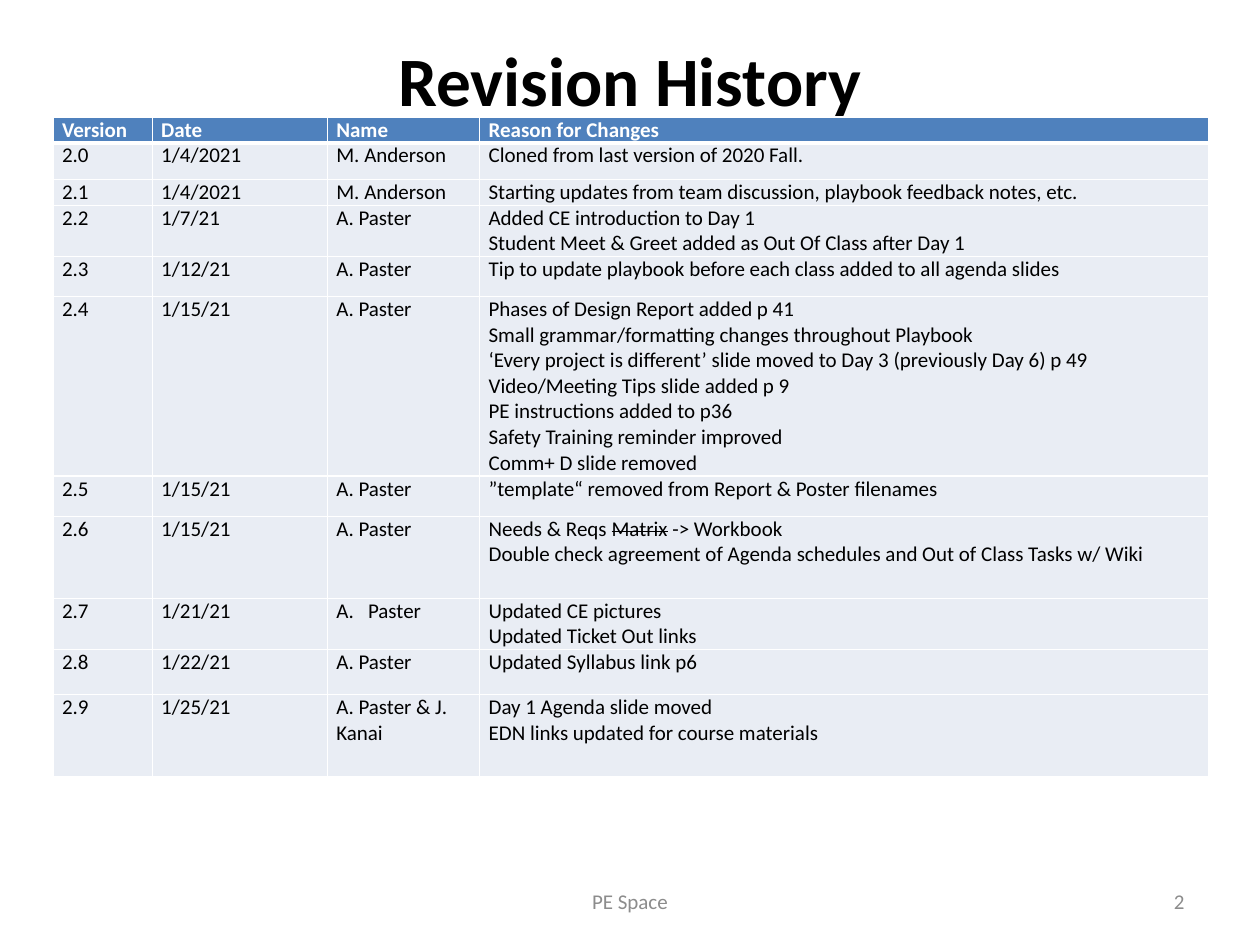
from lxml import etree
from pptx import Presentation
from pptx.dml.color import RGBColor
from pptx.enum.text import MSO_ANCHOR, PP_ALIGN
from pptx.oxml.ns import qn
from pptx.util import Cm, Pt

CENTER, LEFT, RIGHT = PP_ALIGN.CENTER, PP_ALIGN.LEFT, PP_ALIGN.RIGHT
TOP, MIDDLE = MSO_ANCHOR.TOP, MSO_ANCHOR.MIDDLE
FONT = "Calibri"
COLORS = {"text": "000000", "white": "FFFFFF", "header": "4F81BD", "body": "E9EDF4", "footer": "8C8C8C"}
COLUMN_WIDTHS = [2.0, 3.53, 3.07, 14.7]
HEADERS = ["Version", "Date", "Name", "Reason for Changes"]
HEADER_HEIGHT = 0.52
STRUCK = "Matrix"
LETTERED = "2.7"
REVISIONS = [
    (0.74, "2.0", "1/4/2021", "M. Anderson", "Cloned from last version of 2020 Fall."),
    (0.52, "2.1", "1/4/2021", "M. Anderson",
     "Starting updates from team discussion, playbook feedback notes, etc."),
    (1.03, "2.2", "1/7/21", "A. Paster",
     "Added CE introduction to Day 1\nStudent Meet & Greet added as Out Of Class after Day 1"),
    (0.81, "2.3", "1/12/21", "A. Paster",
     "Tip to update playbook before each class added to all agenda slides"),
    (3.62, "2.4", "1/15/21", "A. Paster",
     "Phases of Design Report added p 41\n"
     "Small grammar/formatting changes throughout Playbook\n"
     "‘Every project is different’ slide moved to Day 3 (previously Day 6) p 49\n"
     "Video/Meeting Tips slide added p 9\n"
     "PE instructions added to p36\n"
     "Safety Training reminder improved\n"
     "Comm+ D slide removed"),
    (0.81, "2.5", "1/15/21", "A. Paster", "”template“ removed from Report & Poster filenames"),
    (1.65, "2.6", "1/15/21", "A. Paster",
     "Needs & Reqs Matrix -> Workbook\n"
     "Double check agreement of Agenda schedules and Out of Class Tasks w/ Wiki"),
    (1.03, LETTERED, "1/21/21", "Paster", "Updated CE pictures\nUpdated Ticket Out links"),
    (0.91, "2.8", "1/22/21", "A. Paster", "Updated Syllabus link p6"),
    (1.65, "2.9", "1/25/21", "A. Paster & J. Kanai",
     "Day 1 Agenda slide moved\nEDN links updated for course materials"),
]


def add_span(para, text, size=12, color="text", bold=False, struck=False):
    """Add a formatted run to a paragraph."""
    span = para.add_run()
    span.text = text
    span.font.name = FONT
    span.font.size = Pt(size)
    span.font.bold = bold
    span.font.color.rgb = RGBColor.from_string(COLORS[color])
    if struck:
        span.font._element.set("strike", "sngStrike")


def add_text(page, text, left, top, width, height, align=CENTER, anchor=MIDDLE, inset=0.25, **style):
    """Add a one-paragraph text box."""
    box = page.shapes.add_textbox(Cm(left), Cm(top), Cm(width), Cm(height))
    frame = box.text_frame
    frame.word_wrap = True
    frame.vertical_anchor = anchor
    frame.margin_left = frame.margin_right = Cm(0.25)
    frame.margin_top = frame.margin_bottom = Cm(inset)
    para = frame.paragraphs[0]
    para.alignment = align
    add_span(para, text, **style)


def set_border(cell, side, width):
    """Draw one white edge of a table cell."""
    line = etree.SubElement(cell._tc.get_or_add_tcPr(), qn(f"a:ln{side}"), w=str(Pt(width)))
    fill = etree.SubElement(line, qn("a:solidFill"))
    etree.SubElement(fill, qn("a:srgbClr"), val=COLORS["white"])


def set_lettering(para):
    """Number a paragraph with capital letters and a hanging indent."""
    properties = para._p.get_or_add_pPr()
    properties.set("marL", str(Cm(0.64)))
    properties.set("indent", str(Cm(-0.64)))
    etree.SubElement(properties, qn("a:buFont"), typeface="+mj-lt")
    etree.SubElement(properties, qn("a:buAutoNum"), type="alphaUcPeriod")


def fill_cell(cell, text, fill="body", top=1, bottom=1, lettered=False, **style):
    """Write and format one table cell."""
    cell.margin_left = cell.margin_right = Cm(0.18)
    cell.margin_top = cell.margin_bottom = 0
    for side, width in {"L": 1, "R": 1, "T": top, "B": bottom}.items():
        set_border(cell, side, width)
    cell.fill.solid()
    cell.fill.fore_color.rgb = RGBColor.from_string(COLORS[fill])
    frame = cell.text_frame
    for index, line in enumerate(text.split("\n")):
        para = frame.add_paragraph() if index else frame.paragraphs[0]
        para.alignment = LEFT
        if lettered:
            set_lettering(para)
        before, match, after = line.partition(STRUCK)
        for part in (before, match, after):
            if part:
                add_span(para, part, struck=part == STRUCK, **style)


def add_revision_table(page):
    """Add the table of revisions under its header row."""
    heights = [HEADER_HEIGHT] + [revision[0] for revision in REVISIONS]
    table = page.shapes.add_table(len(heights), len(HEADERS), Cm(1.07), Cm(2.36),
                                  Cm(sum(COLUMN_WIDTHS)), Cm(sum(heights))).table
    for column, width in zip(table.columns, COLUMN_WIDTHS):
        column.width = Cm(width)
    for row, height in zip(table.rows, heights):
        row.height = Cm(height)
    for column, text in enumerate(HEADERS):
        fill_cell(table.cell(0, column), text, fill="header", bottom=3, color="white", bold=True)
    for row, (_, *texts) in enumerate(REVISIONS, start=1):
        for column, text in enumerate(texts):
            lettered = texts[0] == LETTERED and HEADERS[column] == "Name"
            fill_cell(table.cell(row, column), text, top=3 if row == 1 else 1, lettered=lettered)


def main():
    """Build the revision history slide."""
    deck = Presentation()
    deck.slide_width, deck.slide_height = Cm(25.4), Cm(19.05)
    page = deck.slides.add_slide(deck.slide_layouts[6])
    add_text(page, "Revision History", 1.27, 0.76, 22.86, 3.18, anchor=TOP, inset=0, size=39.6, bold=True)
    add_revision_table(page)
    add_text(page, "PE Space", 8.68, 17.66, 8.04, 1.01, inset=0.13, color="footer")
    add_text(page, "2", 18.2, 17.66, 5.93, 1.01, align=RIGHT, inset=0.13, color="footer")
    deck.save("out.pptx")


if __name__ == "__main__":
    main()
